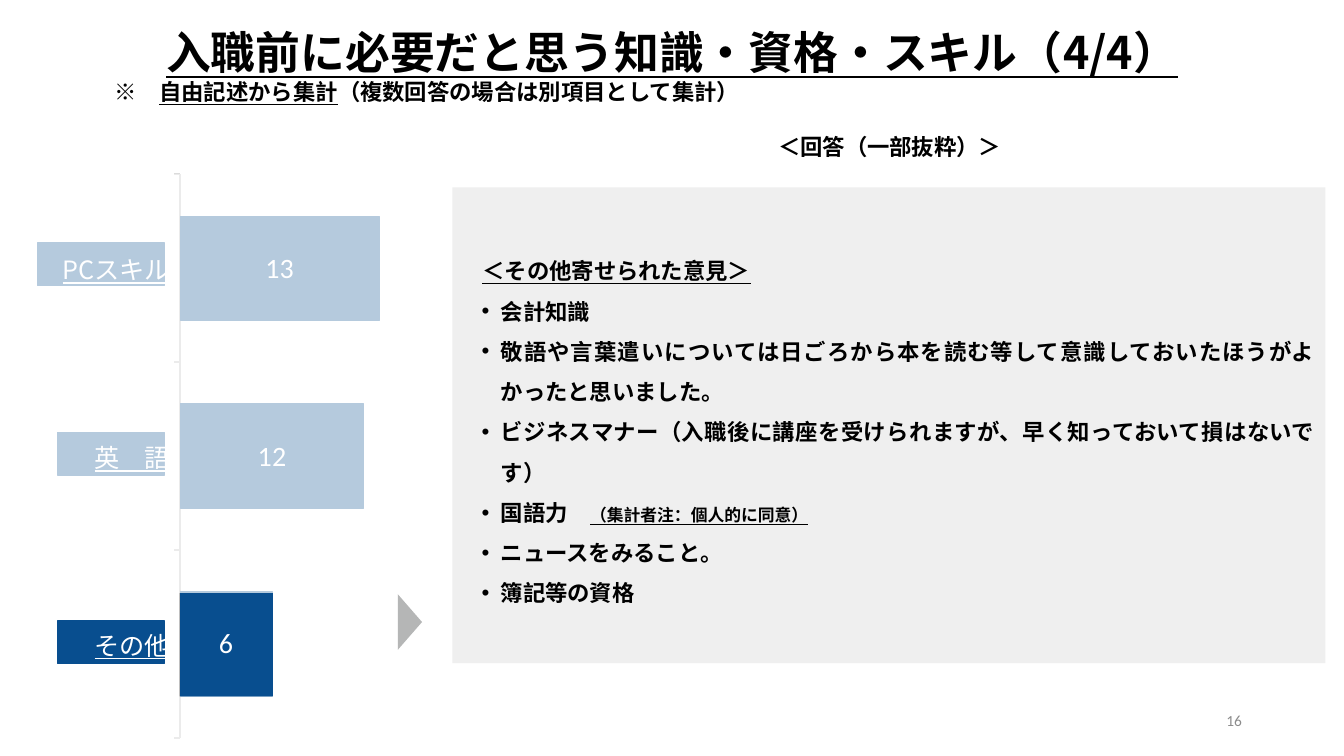
import pptx
import pptx.chart.data
import pptx.dml.color
import pptx.enum.chart
import pptx.enum.shapes
import pptx.enum.text
import pptx.oxml
import pptx.oxml.ns
import pptx.util
import lxml.etree

Cm, Pt = pptx.util.Cm, pptx.util.Pt
SHAPE = pptx.enum.shapes.MSO_SHAPE
ALIGN = pptx.enum.text.PP_ALIGN
MIDDLE = pptx.enum.text.MSO_ANCHOR.MIDDLE
qn = pptx.oxml.ns.qn

COLORS = {
    "blue": "084E8F",
    "black": "000000",
    "white": "FFFFFF",
    "panel": "EFEFEF",
    "arrow": "B5B6B6",
    "axis": "BFBFBF",
    "number": "8C8C8C",
}
JAPANESE = "Noto Sans CJK JP"
LATIN = "Calibri"


def color(name):
    return pptx.dml.color.RGBColor.from_string(COLORS[name])


class SlideBuilder:
    """Holds the text style and the current slide."""

    def __init__(self, slide):
        self.slide = slide
        self.size = 16

    def style(self, font, size=None, name="black", bold=True, underline=False, face=JAPANESE):
        font.size, font.bold, font.underline = Pt(size or self.size), bold, underline
        font.name = face
        font.color.rgb = color(name)
        properties = font._element
        east_asian = lxml.etree.Element(qn("a:ea"), typeface=face)
        properties.find(qn("a:latin")).addnext(east_asian)

    def shape(self, box, fill, kind=SHAPE.RECTANGLE, outline=None, alpha=None):
        shape = self.slide.shapes.add_shape(kind, *map(Cm, box))
        shape.shadow.inherit = False
        shape.fill.solid()
        shape.fill.fore_color.rgb = color(fill)
        if alpha:
            fill_color = shape.fill._xPr.find(qn("a:solidFill"))[0]
            lxml.etree.SubElement(fill_color, qn("a:alpha"), val=str(alpha * 1000))
        if outline:
            shape.line.color.rgb = color(outline)
            shape.line.width = Pt(1)
        else:
            shape.line.fill.background()
        return shape

    def runs(self, paragraph, parts):
        """Each part is a text with the style settings that differ."""
        for text, settings in parts:
            run = paragraph.add_run()
            run.text = text
            self.style(run.font, **settings)

    def text(self, box, parts, align=ALIGN.LEFT, anchor=pptx.enum.text.MSO_ANCHOR.TOP):
        shape = self.slide.shapes.add_textbox(*map(Cm, box))
        frame = shape.text_frame
        frame.word_wrap = True
        frame.vertical_anchor = anchor
        frame.paragraphs[0].alignment = align
        self.runs(frame.paragraphs[0], parts)

    def comments(self, box, heading, items):
        frame = self.shape(box, "panel").text_frame
        frame.word_wrap = True
        frame.vertical_anchor = MIDDLE
        for index, parts in enumerate([heading] + items):
            paragraph = frame.add_paragraph() if index else frame.paragraphs[0]
            paragraph.alignment = ALIGN.JUSTIFY
            paragraph.line_spacing = 1.5
            properties = paragraph._p.get_or_add_pPr()
            properties.set("marL", str(Cm(0.97 if index else 0.51)))
            if index:
                properties.set("indent", str(Cm(-0.48)))
                lxml.etree.SubElement(properties, qn("a:buFont"), typeface="Arial")
                lxml.etree.SubElement(properties, qn("a:buChar"), char="•")
            self.runs(paragraph, parts)

    def bar_chart(self, box, categories, values, plot_box):
        data = pptx.chart.data.CategoryChartData()
        data.categories = categories
        data.add_series("回答数", values)
        kind = pptx.enum.chart.XL_CHART_TYPE.BAR_STACKED
        chart = self.slide.shapes.add_chart(kind, *map(Cm, box), data).chart
        chart.has_legend = chart.has_title = False
        self.style(chart.font, 10, bold=False, face=LATIN)

        # Bars and their values
        plot = chart.plots[0]
        plot.gap_width, plot.overlap, plot.vary_by_categories = 80, 100, False
        bars = plot.series[0].format
        bars.fill.solid()
        bars.fill.fore_color.rgb = bars.line.color.rgb = color("blue")
        bars.line.width = Pt(0.75)
        plot.has_data_labels = True
        labels = plot.data_labels
        labels.show_value = True
        labels.position = pptx.enum.chart.XL_LABEL_POSITION.CENTER
        self.style(labels.font, 20, "white", bold=False, face=LATIN)

        # Axes
        axis = chart.category_axis
        axis.major_tick_mark = pptx.enum.chart.XL_TICK_MARK.OUTSIDE
        axis.format.line.color.rgb = color("axis")
        axis.format.line.width = Pt(1.25)
        self.style(axis.tick_labels.font, 18, "white", bold=False, underline=True)
        chart.value_axis.minimum_scale, chart.value_axis.maximum_scale = 0, 14
        chart.value_axis.has_major_gridlines = False
        chart.value_axis.visible = False

        # Inner plot area
        area = chart._chartSpace.chart.plotArea
        for old in area.findall(qn("c:layout")):
            area.remove(old)
        layout = lxml.etree.Element(qn("c:layout"))
        manual = lxml.etree.SubElement(layout, qn("c:manualLayout"))
        settings = [("layoutTarget", "inner"), ("xMode", "edge"), ("yMode", "edge")]
        for tag, value in settings + list(zip("xywh", plot_box)):
            lxml.etree.SubElement(manual, qn("c:" + tag), val=str(value))
        area.insert(0, layout)


def main():
    presentation = pptx.Presentation()
    presentation.slide_width, presentation.slide_height = Cm(33.87), Cm(19.05)
    slide = presentation.slides.add_slide(presentation.slide_layouts[6])
    builder = SlideBuilder(slide)

    # Plates behind the category names, flush right
    plate_right = 4.14
    for width, top in [(3.2, 6.12), (2.69, 10.9), (2.69, 15.65)]:
        builder.shape((plate_right - width, top, width, 1.07), "blue", outline="blue")

    # Title and note
    builder.text((0.94, 0.51, 32, 1.63),
                 [("入職前に必要だと思う知識・資格・スキル（4/4）", {"size": 32, "underline": True})],
                 ALIGN.CENTER)
    builder.text((2.64, 1.85, 28.6, 0.94), [
        ("※　", {}),
        ("自由記述から集計", {"underline": True}),
        ("（複数回答の場合は別項目として集計）", {}),
    ])

    # Answers
    arrow = builder.shape((9.63, 15.37, 1.4, 0.61), "arrow", SHAPE.ISOSCELES_TRIANGLE)
    arrow.rotation = 90
    builder.comments((11.4, 4.72, 22, 11.99),
                     [("＜その他寄せられた意見＞", {"underline": True})], [
        [("会計知識", {})],
        [("敬語や言葉遣いについては日ごろから本を読む等して意識しておいたほうがよかったと思いました。", {})],
        [("ビジネスマナー（入職後に講座を受けられますが、早く知っておいて損はないです）", {})],
        [("国語力　", {}), ("（集計者注：個人的に同意）", {"size": 12, "underline": True})],
        [("ニュースをみること。", {})],
        [("簿記等の資格", {})],
    ])
    builder.text((18.92, 3.23, 7.01, 0.94), [("＜回答（一部抜粋）＞", {})], ALIGN.CENTER)

    # Chart, with veils over all but the last bar
    builder.bar_chart((0.51, 3.94, 9.83, 15.11), ["その他", "英　語", "PCスキル"], [6, 12, 13],
                      (0.41, 0.03, 0.55, 0.94))
    for top, height in [(4.37, 10.57), (17.55, 1.12)]:
        builder.shape((0.51, top, 9.4, height), "white", alpha=70)

    # Page number
    builder.text((23.93, 17.65, 7.62, 1.02),
                 [("16", {"size": 11, "name": "number", "bold": False, "face": LATIN})],
                 ALIGN.RIGHT, MIDDLE)

    presentation.save("out.pptx")


if __name__ == "__main__":
    main()
